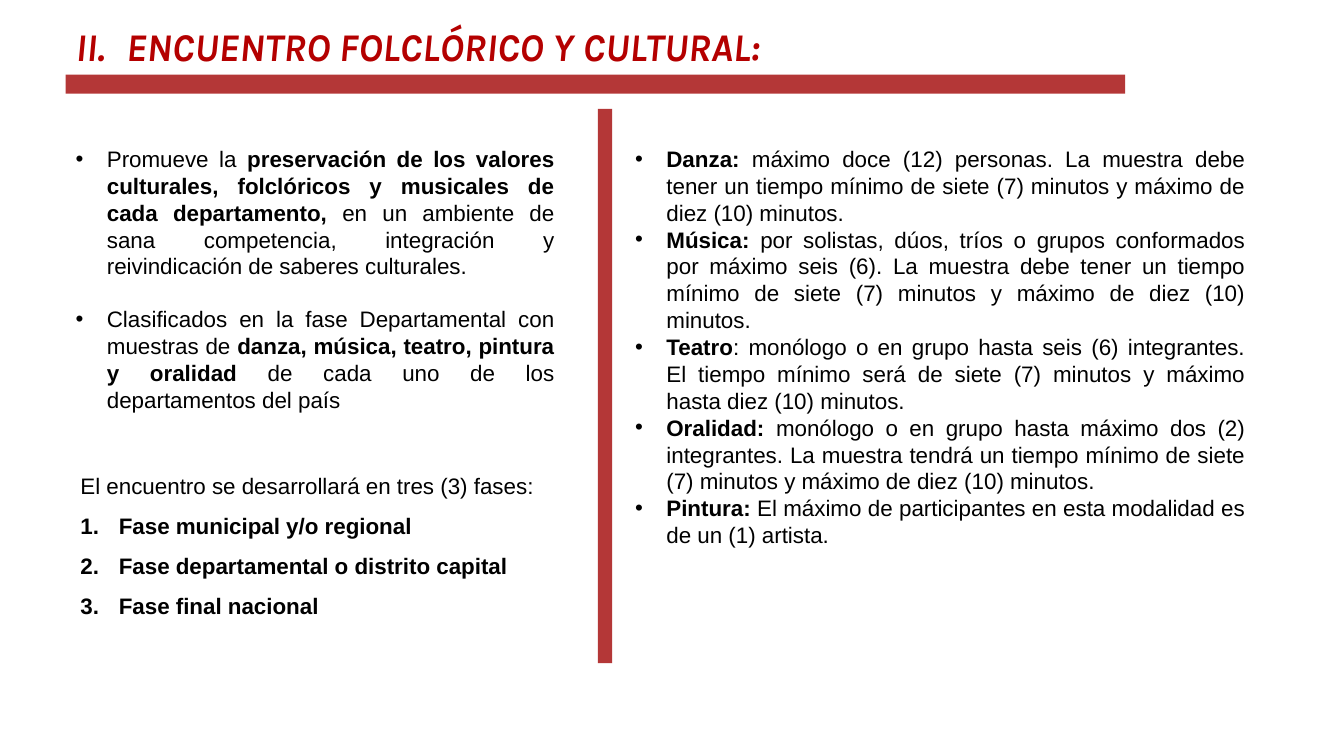
from dataclasses import dataclass

from lxml import etree
from pptx import Presentation
from pptx import util as u
from pptx.dml.color import RGBColor
from pptx.enum import shapes, text
from pptx.oxml.ns import qn

SLIDE_W, SLIDE_H = u.Inches(13.33), u.Inches(7.5)
TITLE_RED, BAR_RED, INK = "B40000", "B43737", "000000"
BULLET_INDENT, NUMBER_INDENT = 0.31, 0.38


@dataclass(frozen=True)
class Area:
    """Position and size as percentages of the slide."""
    left: float
    top: float
    width: float
    height: float

    def lengths(self) -> tuple[int, int, int, int]:
        return (int(SLIDE_W * self.left / 100), int(SLIDE_H * self.top / 100),
                int(SLIDE_W * self.width / 100), int(SLIDE_H * self.height / 100))


@dataclass(frozen=True)
class Item:
    """A paragraph; words between asterisks are bold."""
    words: str
    marker: str = ""
    before: float = 0
    after: float = 0
    spacing: float = 1.0


HEADING = Area(4.88, 2.27, 86.72, 7.6)
BARS = [Area(4.88, 9.87, 78.84, 2.53), Area(44.49, 14.4, 1.05, 73.33)]
PURPOSE = Area(4.88, 18.53, 37.13, 37.2)
PHASES = Area(5.25, 62, 36.38, 26.4)
CATEGORIES = Area(46.51, 18.53, 46.89, 62.4)

purpose_items = [
    Item("Promueve la *preservación de los valores culturales, folclóricos y "
         "musicales de cada departamento,* en un ambiente de sana competencia, "
         "integración y reivindicación de saberes culturales.", "•"),
    Item("Clasificados en la fase Departamental con muestras de *danza, música, "
         "teatro, pintura y oralidad *de cada uno de los departamentos del país",
         "•", before=18.4),
]
phase_names = ["Fase municipal y/o regional", "Fase departamental o distrito capital",
               "Fase final nacional"]
phase_items = [
    Item("El encuentro se desarrollará en tres (3) fases:", after=8, spacing=0.96),
    *(Item(f"*{name}*", "1.", after=8, spacing=1.07) for name in phase_names),
]
category_items = [Item(words, "•") for words in (
    "*Danza: *máximo doce (12) personas. La muestra debe tener un tiempo mínimo "
    "de siete (7) minutos y máximo de diez (10) minutos.",
    "*Música: *por solistas, dúos, tríos o grupos conformados por máximo seis (6). "
    "La muestra debe tener un tiempo mínimo de siete (7) minutos y máximo de "
    "diez (10) minutos.",
    "*Teatro*: monólogo o en grupo hasta seis (6) integrantes. El tiempo mínimo "
    "será de siete (7) minutos y máximo hasta diez (10) minutos.",
    "*Oralidad: *monólogo o en grupo hasta máximo dos (2) integrantes. La muestra "
    "tendrá un tiempo mínimo de siete (7) minutos y máximo de diez (10) minutos.",
    "*Pintura: *El máximo de participantes en esta modalidad es de un (1) artista.",
)]


def color(hex_code: str) -> RGBColor:
    return RGBColor.from_string(hex_code)


def place(shape, area: Area) -> None:
    shape.left, shape.top, shape.width, shape.height = area.lengths()


def style_font(font, name: str, size: float, hex_code: str) -> None:
    font.name, font.size = name, u.Pt(size)
    font.color.rgb = color(hex_code)


def set_marker(paragraph, marker: str) -> None:
    """Give the paragraph a bullet, automatic number, or no marker."""
    properties = paragraph._p.get_or_add_pPr()
    indent = {"•": BULLET_INDENT, "1.": NUMBER_INDENT}.get(marker, 0)
    properties.set("marL", str(u.Inches(indent)))
    properties.set("indent", str(u.Inches(-indent)))
    if marker == "•":
        etree.SubElement(properties, qn("a:buFont"), typeface="Arial")
        etree.SubElement(properties, qn("a:buChar"), char=marker)
    elif marker:
        etree.SubElement(properties, qn("a:buAutoNum"), type="arabicPeriod")
    else:
        etree.SubElement(properties, qn("a:buNone"))


def write_items(shape, items: list[Item]) -> None:
    frame = shape.text_frame
    frame.word_wrap = True
    frame.auto_size = text.MSO_AUTO_SIZE.NONE
    frame.vertical_anchor = text.MSO_ANCHOR.TOP
    for index, item in enumerate(items):
        paragraph = frame.add_paragraph() if index else frame.paragraphs[0]
        set_marker(paragraph, item.marker)
        paragraph.alignment = text.PP_ALIGN.JUSTIFY
        paragraph.line_spacing = item.spacing
        paragraph.space_before = u.Pt(item.before)
        paragraph.space_after = u.Pt(item.after)
        style_font(paragraph.font, "Arial", 16, INK)
        for part, words in enumerate(item.words.split("*")):
            if words:
                run = paragraph.add_run()
                run.text, run.font.bold = words, part % 2 == 1


def add_bar(slide, area: Area) -> None:
    bar = slide.shapes.add_shape(shapes.MSO_SHAPE.RECTANGLE, *area.lengths())
    bar.shadow.inherit = False
    bar.fill.solid()
    bar.fill.fore_color.rgb = color(BAR_RED)
    bar.line.fill.background()


def main() -> None:
    deck = Presentation()
    deck.slide_width, deck.slide_height = SLIDE_W, SLIDE_H
    slide = deck.slides.add_slide(deck.slide_layouts.get_by_name("Two Content"))
    heading, purpose, categories = slide.placeholders

    # Heading
    place(heading, HEADING)
    heading.text_frame.auto_size = text.MSO_AUTO_SIZE.NONE
    heading.text_frame.vertical_anchor = text.MSO_ANCHOR.TOP
    heading.text_frame.text = "II.\tENCUENTRO FOLCLÓRICO Y CULTURAL:"
    heading_line = heading.text_frame.paragraphs[0]
    heading_line.alignment = text.PP_ALIGN.LEFT
    style_font(heading_line.font, "Karla", 28, TITLE_RED)
    heading_line.font.bold = heading_line.font.italic = True

    # Rule under the heading and divider between the columns
    for area in BARS:
        add_bar(slide, area)

    # Left column: purpose and phases
    place(purpose, PURPOSE)
    write_items(purpose, purpose_items)
    phases = slide.shapes.add_textbox(*PHASES.lengths())
    write_items(phases, phase_items)

    # Right column: categories
    place(categories, CATEGORIES)
    write_items(categories, category_items)

    deck.save("out.pptx")


if __name__ == "__main__":
    main()
